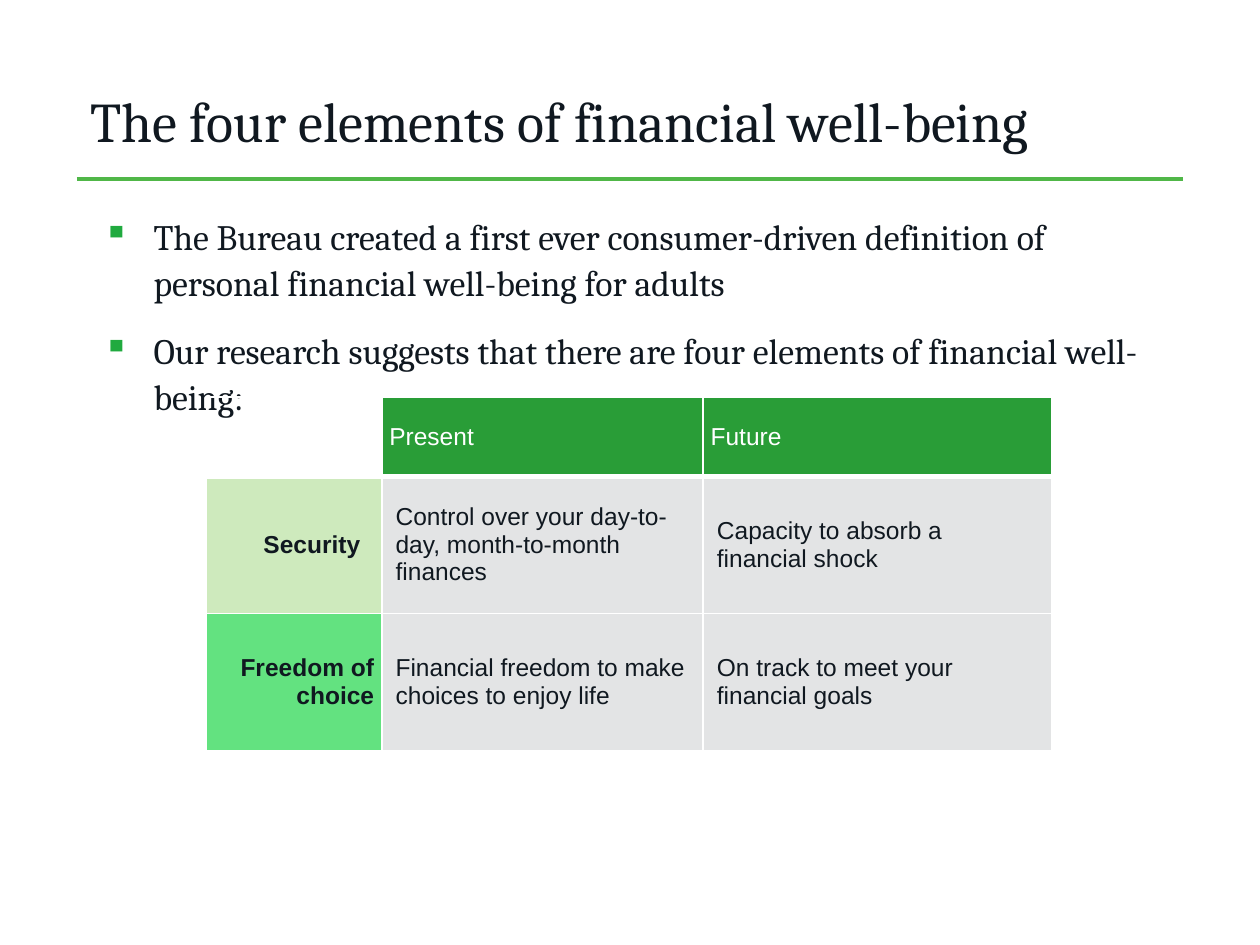
from dataclasses import dataclass

from lxml.etree import SubElement
from pptx import Presentation
from pptx.dml.color import RGBColor
from pptx.enum.shapes import MSO_CONNECTOR
from pptx.enum.text import MSO_ANCHOR, PP_ALIGN
from pptx.oxml.ns import qn
from pptx.util import Inches, Pt


@dataclass(frozen=True)
class Theme:
    serif: str = "Cambria"
    sans: str = "Arial"
    ink: str = "101820"
    white: str = "FFFFFF"
    rule: str = "50B748"
    bullet: str = "20AA3F"
    head: str = "299D37"
    light: str = "CEEABD"
    bright: str = "63E280"
    grey: str = "E3E4E5"
    title: float = 32
    body: float = 20.4
    cell: float = 14


def rgb(code):
    return RGBColor.from_string(code)


def style(font, name, size, color, bold=False):
    font.name, font.size, font.bold = name, Pt(size), bold
    font.color.rgb = rgb(color)


def border(cell, color, widths):
    """Draw the cell's edges; widths maps L, R, T and B to points."""
    props = cell._tc.get_or_add_tcPr()
    for side, width in widths.items():
        line = SubElement(props, qn(f"a:ln{side}"), w=str(Pt(width)))
        fill = SubElement(line, qn("a:solidFill"))
        SubElement(fill, qn("a:srgbClr"), val=color)


class Deck:
    def __init__(self, theme):
        self.theme = theme
        self.file = Presentation()
        self.file.slide_width, self.file.slide_height = Inches(10), Inches(7.5)
        self.slide = self.file.slides.add_slide(self.file.slide_layouts[5])

    def title(self, text, box):
        shape = self.slide.shapes.title
        shape.left, shape.top, shape.width, shape.height = map(Inches, box)
        frame = shape.text_frame
        frame.text = text
        frame.vertical_anchor = MSO_ANCHOR.MIDDLE
        para = frame.paragraphs[0]
        para.alignment = PP_ALIGN.LEFT
        style(para.font, self.theme.serif, self.theme.title, self.theme.ink)

    def rule(self, left, right, top):
        line = self.slide.shapes.add_connector(
            MSO_CONNECTOR.STRAIGHT, *map(Inches, (left, top, right, top)))
        line.line.color.rgb = rgb(self.theme.rule)
        line.line.width = Pt(2)
        SubElement(line._element.spPr, qn("a:effectLst"))

    def bullets(self, items, box):
        frame = self.slide.shapes.add_textbox(*map(Inches, box)).text_frame
        frame.word_wrap = True
        frame.text = "\n".join(items)
        for para in frame.paragraphs:
            props = para._p.get_or_add_pPr()
            props.set("marL", str(Inches(0.5)))
            props.set("indent", str(Inches(-0.4)))
            color = SubElement(props, qn("a:buClr"))
            SubElement(color, qn("a:srgbClr"), val=self.theme.bullet)
            SubElement(props, qn("a:buChar"), char="▪")
            para.line_spacing = 1.08
            para.space_after = Pt(12)
            style(para.font, self.theme.serif, self.theme.body, self.theme.ink)

    def table(self, rows, spot, widths, heights):
        size = sum(widths), sum(heights)
        grid = self.slide.shapes.add_table(
            len(rows), len(widths), *map(Inches, (*spot, *size))).table
        grid.first_row = grid.horz_banding = False
        for col, width in zip(grid.columns, widths):
            col.width = Inches(width)
        for row, height in zip(grid.rows, heights):
            row.height = Inches(height)
        labels = {1: self.theme.light, 2: self.theme.bright}
        for r, row in enumerate(rows):
            for c, text in enumerate(row):
                cell = grid.cell(r, c)
                border(cell, self.theme.white, {
                    "L": 1, "R": 1, "T": 3 if r == 1 else 1, "B": 1 if r else 3})
                if r and c:
                    fill = self.theme.grey
                else:
                    fill = labels[r] if r else self.theme.head
                self.fill(cell, text, fill, head=r == 0, label=c == 0)
        grid.cell(1, 0).margin_right = Inches(0.17)

    def fill(self, cell, text, color, head, label):
        if not text:
            cell.fill.background()
            return
        cell.fill.solid()
        cell.fill.fore_color.rgb = rgb(color)
        cell.text = text
        cell.vertical_anchor = MSO_ANCHOR.MIDDLE
        cell.margin_left = Inches(0.06 if head or label else 0.11)
        cell.margin_right = Inches(0.06)
        cell.margin_top = cell.margin_bottom = Inches(0.03)
        para = cell.text_frame.paragraphs[0]
        para.alignment = PP_ALIGN.RIGHT if label else PP_ALIGN.LEFT
        ink = self.theme.white if head else self.theme.ink
        style(para.font, self.theme.sans, self.theme.cell, ink, label)


def main():
    deck = Deck(Theme())
    deck.rule(0.61, 9.39, 1.42)
    deck.title("The four elements of financial well-being", (0.62, 0.54, 8.6, 0.83))
    deck.bullets([
        "The Bureau created a first ever consumer-driven definition of "
        "personal financial well-being for adults",
        "Our research suggests that there are four elements of financial well-being:",
    ], (0.62, 1.63, 8.75, 1.73))
    deck.table([
        ("", "Present", "Future"),
        ("Security", "Control over your day-to-day, month-to-month finances",
         "Capacity to absorb a\vfinancial shock"),
        ("Freedom of choice", "Financial freedom to make choices to enjoy life",
         "On track to meet your financial goals"),
    ], (1.64, 3.15), (1.39, 2.55, 2.77), (0.63, 1.09, 1.09))
    deck.file.save("out.pptx")


if __name__ == "__main__":
    main()
